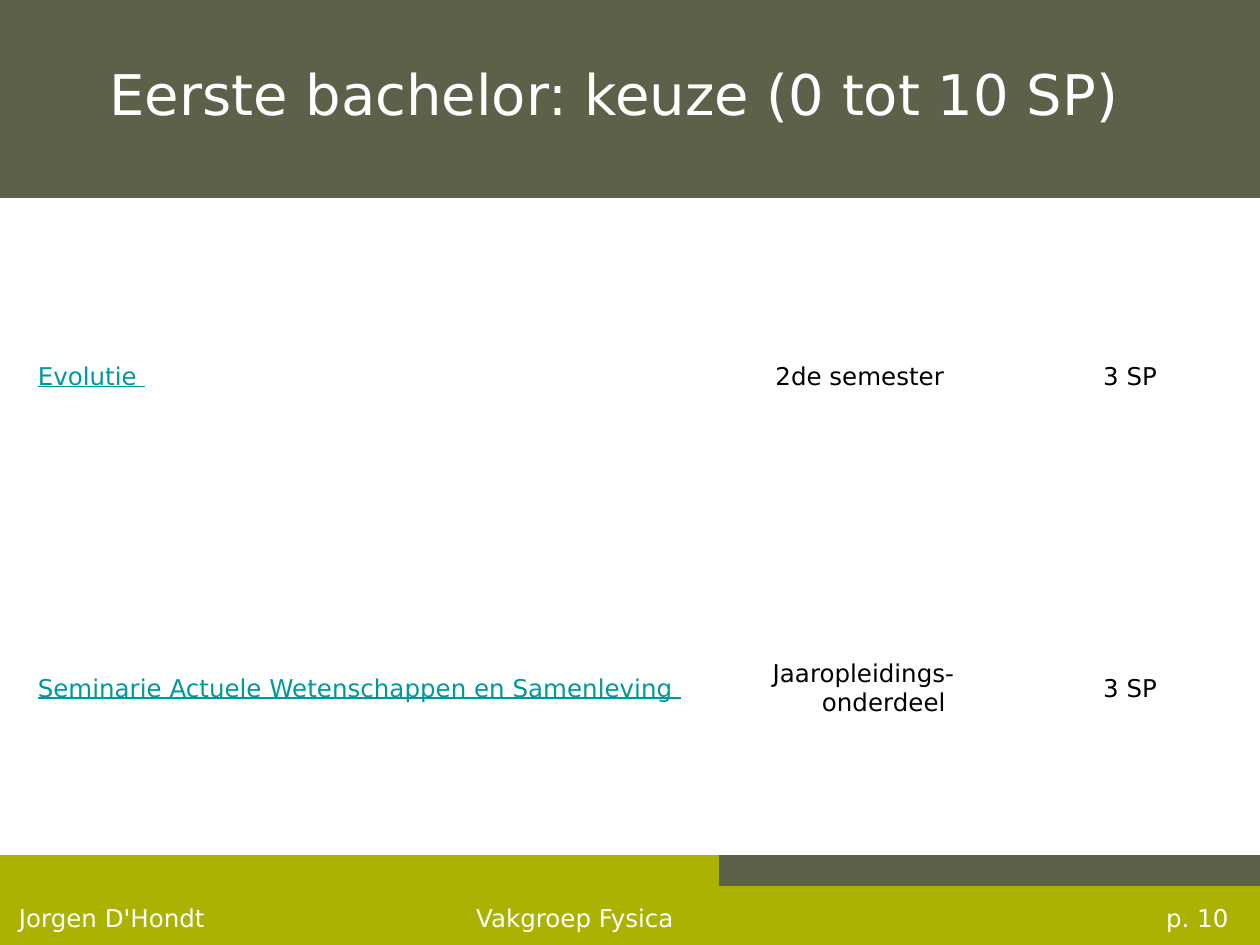
from pptx import Presentation
from pptx.dml.color import RGBColor
from pptx.enum.shapes import MSO_SHAPE
from pptx.enum.text import MSO_ANCHOR as ANCHOR, PP_ALIGN as ALIGN
from pptx.util import Inches, Pt

OLIVE, LIME, WHITE, BLACK, TEAL = "5F604A", "ABB202", "FFFFFF", "000000", "009999"


def color(hex_string):
    return RGBColor.from_string(hex_string)


def add_text(frame, text, size, hex_string, align=ALIGN.LEFT):
    """Write one run in the first paragraph of a text frame."""
    paragraph = frame.paragraphs[0]
    paragraph.alignment = align
    run = paragraph.add_run()
    run.text = text
    run.font.name = "DejaVu Sans"
    run.font.size = Pt(size)
    run.font.color.rgb = color(hex_string)
    return paragraph, run


presentation = Presentation()
presentation.slide_width, presentation.slide_height = Inches(10), Inches(7.5)
slide = presentation.slides.add_slide(presentation.slide_layouts[6])

# Footer bars and title band
bars = [
    (0, 6.79, 10, 0.71, LIME),
    (5.71, 6.79, 4.29, 0.24, OLIVE),
    (0, 0, 10, 1.57, OLIVE),
]
for left, top, width, height, fill in bars:
    bar = slide.shapes.add_shape(
        MSO_SHAPE.RECTANGLE, Inches(left), Inches(top), Inches(width), Inches(height))
    bar.shadow.inherit = False
    bar.fill.solid()
    bar.fill.fore_color.rgb = color(fill)
    bar.line.color.rgb = color(fill)
    bar.line.width = Pt(0.75)

title = bar.text_frame
title.word_wrap = True
title.vertical_anchor = ANCHOR.TOP
title.margin_left, title.margin_top = Inches(0.87), Inches(0.47)
title.margin_right = title.margin_bottom = 0
add_text(title, "Eerste bachelor: keuze (0 tot 10 SP)", 32, WHITE)

# Footer texts
footers = [
    ("Jorgen D'Hondt", 0.15, 3, ALIGN.LEFT),
    ("Vakgroep Fysica", 3.78, 3, ALIGN.LEFT),
    ("p. 10", 8.84, 0.91, ALIGN.RIGHT),
]
for text, left, width, align in footers:
    footer = slide.shapes.add_textbox(
        Inches(left), Inches(7.16), Inches(width), Inches(0.24)).text_frame
    footer.word_wrap = True
    footer.vertical_anchor = ANCHOR.BOTTOM
    footer.margin_left = footer.margin_top = footer.margin_right = footer.margin_bottom = 0
    add_text(footer, text, 14, WHITE, align)

# Course table
courses = [
    ("Evolutie ", "2de semester ", "3 SP "),
    ("Seminarie Actuele Wetenschappen en Samenleving ", "Jaaropleidings-onderdeel ", "3 SP "),
]
table = slide.shapes.add_table(
    2, 3, Inches(0.2), Inches(1.75), Inches(9.65), Inches(4.95)).table
table.first_row = table.horz_banding = False
for column, width in zip(table.columns, (5.36, 2.59, 1.7)):
    column.width = Inches(width)
for row, height in zip(table.rows, (2.48, 2.47)):
    row.height = Inches(height)

for row, course in zip(table.rows, courses):
    for index, (cell, text) in enumerate(zip(row.cells, course)):
        is_name = index == 0
        cell.fill.background()
        cell.vertical_anchor = ANCHOR.MIDDLE
        paragraph, run = add_text(
            cell.text_frame, text, 14,
            TEAL if is_name else BLACK, ALIGN.LEFT if is_name else ALIGN.CENTER)
        run.font.underline = is_name
        properties = paragraph._p.get_or_add_pPr()
        properties.set("marL", str(Inches(0.38)))
        properties.set("indent", str(Inches(-0.38)))

presentation.save("out.pptx")
